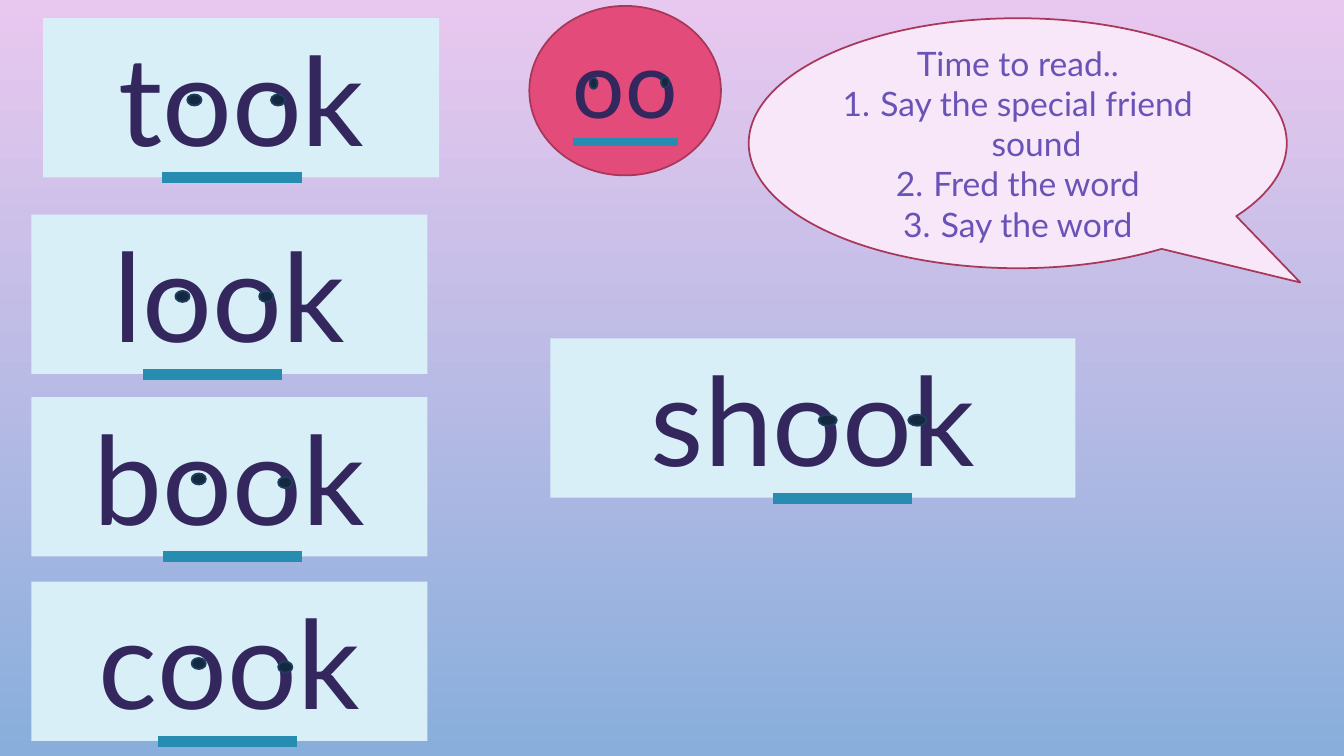
"""Build a phonics slide for reading words with the "oo" special friend sound."""
from dataclasses import dataclass

from lxml import etree
from pptx import Presentation
from pptx.dml.color import RGBColor
from pptx.enum.shapes import MSO_SHAPE
from pptx.enum.text import MSO_ANCHOR, MSO_AUTO_SIZE, MSO_UNDERLINE, PP_ALIGN
from pptx.oxml.ns import qn
from pptx.shapes.autoshape import Shape
from pptx.slide import Slide
from pptx.text.text import TextFrame, _Paragraph, _Run
from pptx.util import Cm, Pt

OVAL = MSO_SHAPE.OVAL
CALLOUT = MSO_SHAPE.OVAL_CALLOUT
TOP = MSO_ANCHOR.TOP
MIDDLE = MSO_ANCHOR.MIDDLE
FIT_SHAPE = MSO_AUTO_SIZE.SHAPE_TO_FIT_TEXT
HEAVY = MSO_UNDERLINE.HEAVY_LINE
CENTER = PP_ALIGN.CENTER

FONT = "Lato"
COLORS = {
    "sky_top": "E9C8EF",
    "sky_bottom": "89AEDB",
    "card": "D9EFF7",
    "word": "33275E",
    "underline": "268DB0",
    "circle": "E34B7A",
    "outline": "A8375A",
    "callout": "F8E7F9",
    "instruction": "6953B7",
    "eye": "14293F",
    "eye_outline": "1D3E5F",
}
SOUND = "oo"
STEPS = ("Say the special friend sound", "Fred the word", "Say the word")
CARD_HEIGHT = 4.01
EYE_HEIGHT = 0.28


@dataclass(frozen=True)
class Box:
    """Position and size in centimetres."""

    left: float
    top: float
    width: float
    height: float

    def lengths(self) -> tuple[Cm, Cm, Cm, Cm]:
        """Return the four lengths in drawing order."""
        return Cm(self.left), Cm(self.top), Cm(self.width), Cm(self.height)


@dataclass(frozen=True)
class WordCard:
    """A word card whose eyes are placed relative to its corner."""

    start: str
    left: float
    top: float
    eyes: tuple[tuple[float, float], ...]
    width: float = 9.98
    eye_width: float = 0.36


LEVEL_EYES = ((3.63, 1.92), (5.74, 1.92))
TILTED_EYES = ((4.04, 1.92), (6.22, 2.01))
CARDS = (
    WordCard("t", 1.09, 0.46, LEVEL_EYES),
    WordCard("l", 0.79, 5.41, LEVEL_EYES),
    WordCard("b", 0.79, 10.01, TILTED_EYES),
    WordCard("c", 0.79, 14.66, TILTED_EYES),
    WordCard("sh", 13.87, 8.53, ((6.76, 1.92), (9.02, 1.92)), 13.23, 0.46),
)
CIRCLE = Box(13.34, 0.15, 4.83, 4.27)
SOUND_BOX = Box(13.34, 0.53, 4.83, 3.07)
SOUND_EYES = (Box(14.86, 1.96, 0.2, EYE_HEIGHT), Box(16.66, 1.93, 0.2, EYE_HEIGHT))
CALLOUT_BOX = Box(18.87, 0.46, 13.56, 6.3)


def color(name: str) -> RGBColor:
    """Look up a named colour."""
    return RGBColor.from_string(COLORS[name])


def add_outlined(slide: Slide, kind: MSO_SHAPE, box: Box, fill: str, line: str) -> Shape:
    """Draw a filled preset shape with a thin outline."""
    shape = slide.shapes.add_shape(kind, *box.lengths())
    shape.shadow.inherit = False
    shape.fill.solid()
    shape.fill.fore_color.rgb = color(fill)
    shape.line.color.rgb = color(line)
    shape.line.width = Pt(1.25)
    return shape


def add_eye(slide: Slide, box: Box) -> None:
    """Draw one eye."""
    add_outlined(slide, OVAL, box, "eye", "eye_outline")


def format_paragraph(paragraph: _Paragraph, size: int, color_name: str) -> None:
    """Centre a paragraph and set its font."""
    paragraph.alignment = CENTER
    paragraph.font.name = FONT
    paragraph.font.size = Pt(size)
    paragraph.font.color.rgb = color(color_name)


def underline(run: _Run) -> None:
    """Give a run a heavy coloured underline."""
    run.font.underline = HEAVY
    underline_fill = etree.SubElement(run.font._element, qn("a:uFill"))
    solid_fill = etree.SubElement(underline_fill, qn("a:solidFill"))
    etree.SubElement(solid_fill, qn("a:srgbClr"), val=COLORS["underline"])


def write_word(text_frame: TextFrame, parts: tuple[str, ...], size: int) -> None:
    """Write a word from its parts, underlining the sound."""
    text_frame.word_wrap = True
    text_frame.auto_size = FIT_SHAPE
    text_frame.vertical_anchor = TOP
    paragraph = text_frame.paragraphs[0]
    format_paragraph(paragraph, size, "word")
    for part in parts:
        run = paragraph.add_run()
        run.text = part
        if part == SOUND:
            underline(run)


def add_sound(slide: Slide) -> None:
    """Draw the circle and place the sound on it as the slide title."""
    add_outlined(slide, OVAL, CIRCLE, "circle", "outline")
    title = slide.shapes.title
    slide.shapes._spTree.append(title._element)
    title.left, title.top, title.width, title.height = SOUND_BOX.lengths()
    write_word(title.text_frame, (SOUND,), 66)
    for eye in SOUND_EYES:
        add_eye(slide, eye)


def add_card(slide: Slide, card: WordCard) -> None:
    """Draw a word card with its eyes."""
    box = Box(card.left, card.top, card.width, CARD_HEIGHT)
    shape = slide.shapes.add_textbox(*box.lengths())
    shape.fill.solid()
    shape.fill.fore_color.rgb = color("card")
    write_word(shape.text_frame, (card.start, SOUND, "k"), 88)
    for left, top in card.eyes:
        add_eye(slide, Box(card.left + left, card.top + top, card.eye_width, EYE_HEIGHT))


def add_instructions(slide: Slide) -> None:
    """Draw the speech bubble with the numbered reading steps."""
    shape = add_outlined(slide, CALLOUT, CALLOUT_BOX, "callout", "outline")
    shape.adjustments[0] = 0.525
    shape.adjustments[1] = 0.557
    text_frame = shape.text_frame
    text_frame.word_wrap = True
    text_frame.vertical_anchor = MIDDLE
    heading = text_frame.paragraphs[0]
    heading.text = "Time to read.."
    format_paragraph(heading, 24, "instruction")
    for step in STEPS:
        paragraph = text_frame.add_paragraph()
        paragraph.text = step
        properties = paragraph._p.get_or_add_pPr()
        properties.set("marL", str(Cm(0.95)))
        properties.set("indent", str(Cm(-0.95)))
        etree.SubElement(properties, qn("a:buFont"), typeface="+mj-lt")
        etree.SubElement(properties, qn("a:buAutoNum"), type="arabicPeriod")
        format_paragraph(paragraph, 24, "instruction")


def main() -> None:
    """Build and save the presentation."""
    presentation = Presentation()
    presentation.slide_width = Cm(33.87)
    presentation.slide_height = Cm(19.05)
    slide = presentation.slides.add_slide(presentation.slide_layouts[5])
    background = slide.background.fill
    background.gradient()
    background.gradient_angle = 270
    for stop, name in zip(background.gradient_stops, ("sky_top", "sky_bottom")):
        stop.color.rgb = color(name)
    add_sound(slide)
    add_instructions(slide)
    for card in CARDS:
        add_card(slide, card)
    presentation.save("out.pptx")


if __name__ == "__main__":
    main()
